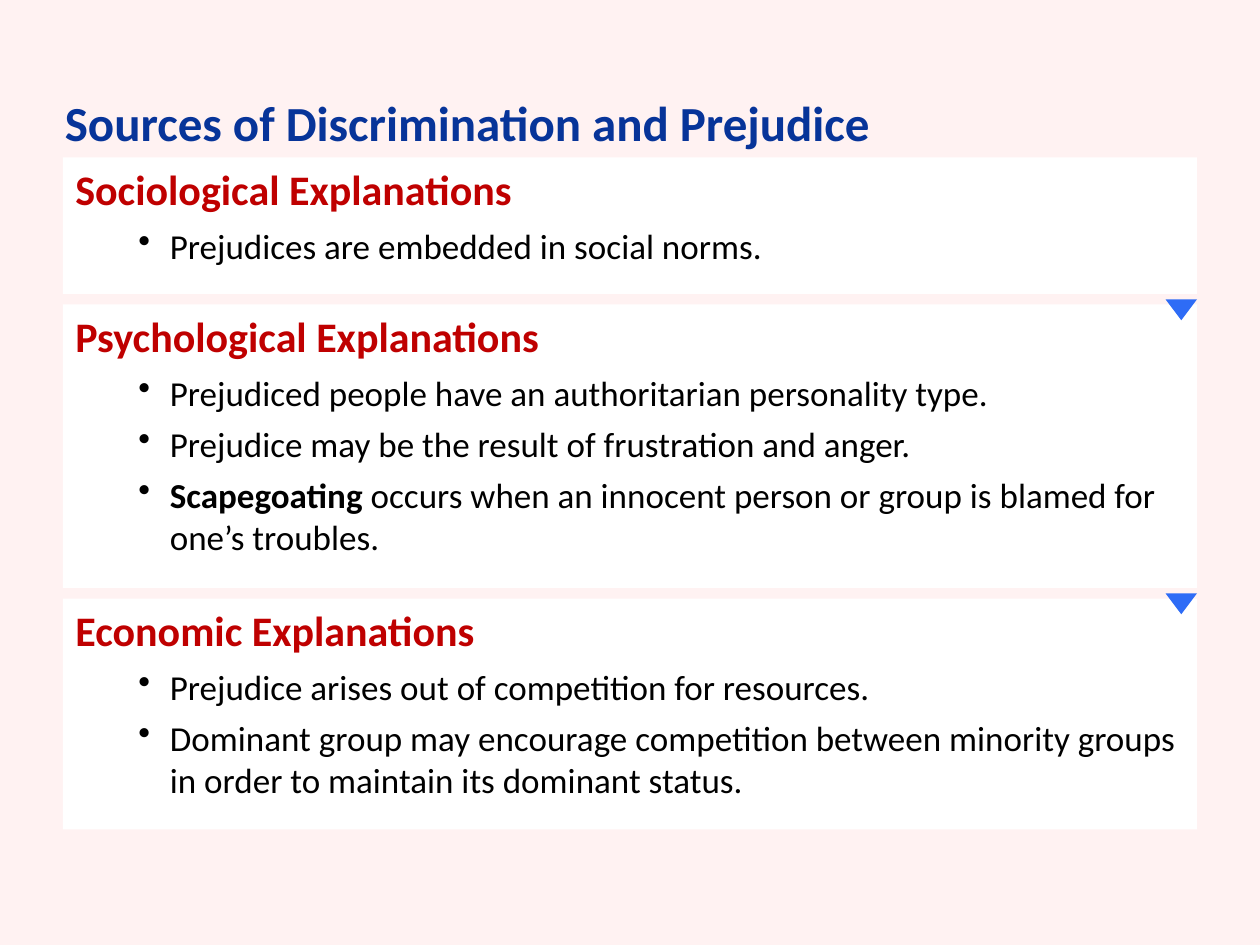
import pptx
import pptx.dml.color
import pptx.enum.shapes
import pptx.enum.text
import pptx.util
import lxml.etree
import pptx.oxml.ns

Pt = pptx.util.Pt
SHAPE = pptx.enum.shapes.MSO_SHAPE
ANCHOR = pptx.enum.text.MSO_ANCHOR
ALIGN = pptx.enum.text.PP_ALIGN

COLORS = {
    "background": "FFF2F2",
    "panel": "FFFFFF",
    "title": "073499",
    "heading": "BF0000",
    "body": "000000",
    "marker": "2E6CF6",
}

# Each section: panel height, heading, bullets; a bullet is a list of (text, bold).
SECTIONS = [
    (78, "Sociological Explanations", [
        [("Prejudices are embedded in social norms.", False)],
    ]),
    (162, "Psychological Explanations", [
        [("Prejudiced people have an authoritarian personality type.", False)],
        [("Prejudice may be the result of frustration and anger.", False)],
        [("Scapegoating", True),
         (" occurs when an innocent person or group is blamed for one’s troubles.", False)],
    ]),
    (132, "Economic Explanations", [
        [("Prejudice arises out of competition for resources.", False)],
        [("Dominant group may encourage competition between minority groups "
          "in order to maintain its dominant status.", False)],
    ]),
]
LEFT, TOP, WIDTH, GAP = 36, 90, 648, 6
MARKER_W, MARKER_H = 18, 12


def rgb(name):
    return pptx.dml.color.RGBColor.from_string(COLORS[name])


def add_text(p, text, size=20, color="body", bold=False, font="Calibri"):
    r = p.add_run()
    r.text = text
    r.font.name = font
    r.font.size = Pt(size)
    r.font.bold = bold
    r.font.color.rgb = rgb(color)


def set_indent(p, left, hanging, bullet=None):
    """Set a hanging indent in points, with an optional bullet character."""
    pPr = p._p.get_or_add_pPr()
    pPr.set("marL", str(Pt(left)))
    pPr.set("indent", str(-Pt(hanging)))
    if bullet:
        bu = lxml.etree.SubElement(pPr, pptx.oxml.ns.qn("a:buChar"))
        bu.set("char", bullet)


class SlideBuilder:
    def __init__(self, slide):
        self.s = slide
        fill = slide.background.fill
        fill.solid()
        fill.fore_color.rgb = rgb("background")

    def shape(self, kind, x, y, w, h, color):
        sp = self.s.shapes.add_shape(kind, Pt(x), Pt(y), Pt(w), Pt(h))
        sp.shadow.inherit = False
        sp.fill.solid()
        sp.fill.fore_color.rgb = rgb(color)
        sp.line.fill.background()
        return sp

    def title(self, text, x, y, w, h):
        tf = self.s.shapes.add_textbox(Pt(x), Pt(y), Pt(w), Pt(h)).text_frame
        tf.word_wrap = True
        tf.vertical_anchor = ANCHOR.BOTTOM
        add_text(tf.paragraphs[0], text, size=28, color="title", bold=True)

    def panel(self, y, h, heading, bullets):
        tf = self.shape(SHAPE.RECTANGLE, LEFT, y, WIDTH, h, "panel").text_frame
        tf.word_wrap = True
        tf.vertical_anchor = ANCHOR.TOP
        p = tf.paragraphs[0]
        p.alignment = ALIGN.LEFT
        p.space_after = Pt(6)
        set_indent(p, 18, 18)
        add_text(p, heading, size=24, color="heading", bold=True)
        for runs in bullets:
            p = tf.add_paragraph()
            p.level = 1
            p.alignment = ALIGN.LEFT
            p.space_after = Pt(5)
            set_indent(p, 54, 18, "•")
            for text, bold in runs:
                add_text(p, text, bold=bold)

    def marker(self, y):
        """Add a downward triangle at the panels' right edge, centred on y."""
        sp = self.shape(SHAPE.ISOSCELES_TRIANGLE, LEFT + WIDTH - MARKER_W, y,
                        MARKER_W, MARKER_H, "marker")
        sp.rotation = 180


def main():
    prs = pptx.Presentation()
    prs.slide_width, prs.slide_height = Pt(720), Pt(540)
    slide = SlideBuilder(prs.slides.add_slide(prs.slide_layouts[6]))

    y, marker_tops = TOP, []
    for height, heading, bullets in SECTIONS:
        slide.panel(y, height, heading, bullets)
        y += height + GAP
        marker_tops.append(y - GAP / 2)
    slide.title("Sources of Discrimination and Prejudice", 30, 48, 642, 42)
    for top in marker_tops[:-1]:
        slide.marker(top)

    prs.save("out.pptx")


if __name__ == "__main__":
    main()
